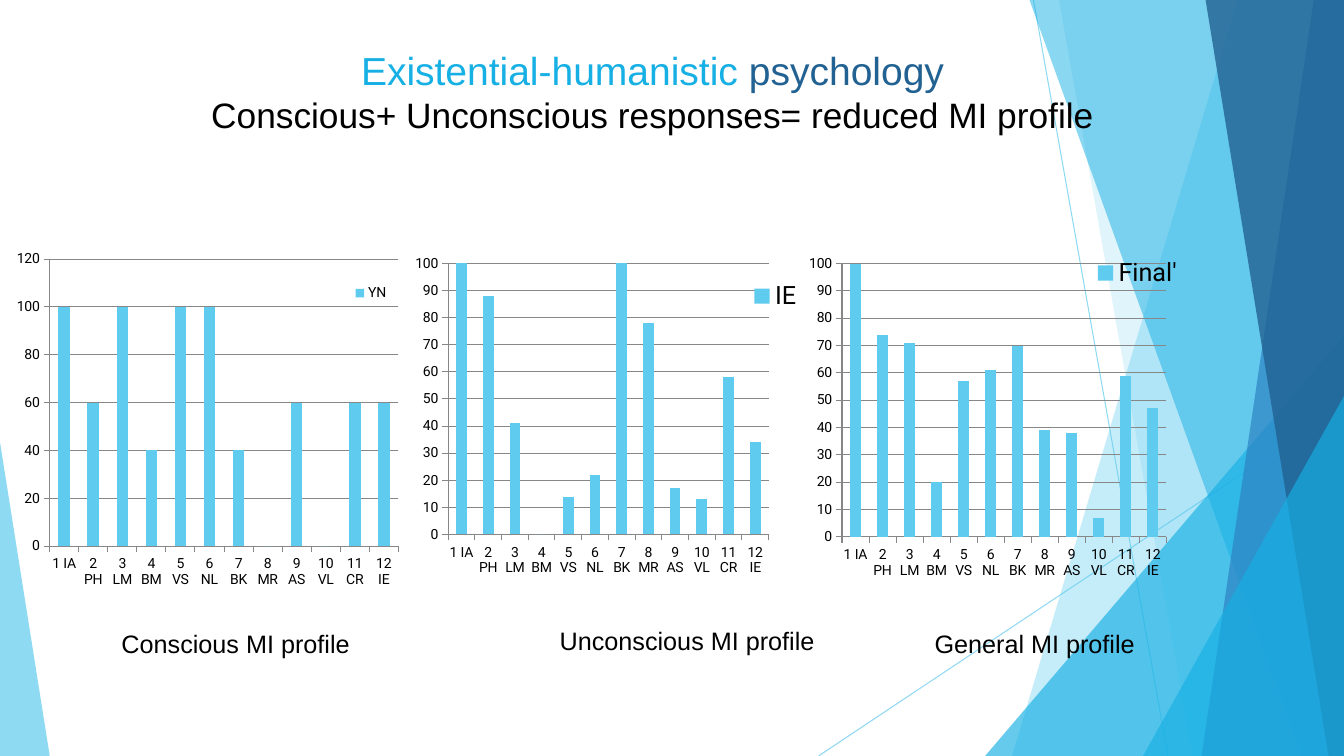
from dataclasses import dataclass

import pptx
import pptx.chart.data
import pptx.dml.color
import pptx.enum.chart
import pptx.enum.shapes
import pptx.enum.text
import pptx.oxml
import pptx.oxml.ns
import pptx.util

qn = pptx.oxml.ns.qn
NS = pptx.oxml.ns.nsdecls("a", "c")
RIGHT_TRIANGLE = 1  # apex adjustment: 0 is left, 1 is right


@dataclass(frozen=True)
class Theme:
    sky: str = "5FCBEF"
    blue: str = "17B0E4"
    steel: str = "2E83C3"
    navy: str = "226292"
    black: str = "000000"
    grid: str = "878787"
    font: str = "Arial"
    chart_font: str = "Roboto"
    title: float = 27.9
    subtitle: float = 25.2
    caption: float = 18
    axis: float = 10


def rgb(color):
    return pptx.dml.color.RGBColor.from_string(color)


def format_font(font, name, size, color):
    font.name, font.size, font.color.rgb = name, pptx.util.Pt(size), rgb(color)


def add_text(p, text, *, font, size, color):
    r = p.add_run()
    r.text = text
    format_font(r.font, font, size, color)


def set_alpha(sp, percent):
    for clr in sp._element.spPr.iter(qn("a:srgbClr")):
        clr.append(pptx.oxml.parse_xml(f'<a:alpha {NS} val="{percent * 1000}"/>'))


def set_layout(parent, index, inner=False, **shares):
    """Place a plot area or legend by x, y, w and h shares of its chart."""
    for old in parent.findall(qn("c:layout")):
        parent.remove(old)
    target = '<c:layoutTarget val="inner"/>' if inner else ""
    modes = "".join(f'<c:{k}Mode val="edge"/>' for k in "xy")
    sizes = "".join(f'<c:{k} val="{v}"/>' for k, v in shares.items())
    parent.insert(index, pptx.oxml.parse_xml(
        f"<c:layout {NS}><c:manualLayout>{target}{modes}{sizes}"
        "</c:manualLayout></c:layout>"))


def clear_fill():
    return pptx.oxml.parse_xml(
        f"<c:spPr {NS}><a:noFill/><a:ln><a:noFill/></a:ln></c:spPr>")


class Deck:
    """Slide builder; every length is a percentage of the slide's size."""

    def __init__(self, theme):
        self.theme = theme
        self.prs = pptx.Presentation()
        self.prs.slide_width = pptx.util.Inches(13.33)
        self.prs.slide_height = pptx.util.Inches(7.5)
        self.s = self.prs.slides.add_slide(self.prs.slide_layouts[5])

    def x(self, share):
        return int(self.prs.slide_width * share / 100)

    def y(self, share):
        return int(self.prs.slide_height * share / 100)

    def box(self, x, y, w, h):
        return self.x(x), self.y(y), self.x(w), self.y(h)

    def paint(self, sp, color, alpha):
        sp.shadow.inherit = False
        sp.fill.solid()
        sp.fill.fore_color.rgb = rgb(color)
        sp.line.fill.background()
        set_alpha(sp, alpha)

    def line(self, x1, y1, x2, y2):
        cx = self.s.shapes.add_connector(
            pptx.enum.shapes.MSO_CONNECTOR.STRAIGHT,
            self.x(x1), self.y(y1), self.x(x2), self.y(y2))
        cx.line.color.rgb = rgb(self.theme.sky)
        cx.line.width = pptx.util.Pt(0.75)
        set_alpha(cx, 70)
        cx._element.spPr.append(pptx.oxml.parse_xml(f"<a:effectLst {NS}/>"))

    def band(self, top, bottom, color, alpha):
        """Fill from a slanted left edge to the right side of the slide."""
        fb = self.s.shapes.build_freeform(self.x(top), 0)
        fb.add_line_segments([(self.x(100), 0), (self.x(100), self.y(100)),
                              (self.x(bottom), self.y(100))])
        self.paint(fb.convert_to_shape(), color, alpha)

    def triangle(self, x, y, w, apex, color, alpha):
        """Stand a triangle on the bottom edge of the slide."""
        sp = self.s.shapes.add_shape(
            pptx.enum.shapes.MSO_SHAPE.ISOSCELES_TRIANGLE,
            *self.box(x, y, w, 100 - y))
        sp.adjustments[0] = apex
        self.paint(sp, color, alpha)

    def title(self, x, y, w, h, lines):
        sp = self.s.shapes.title
        sp.left, sp.top, sp.width, sp.height = self.box(x, y, w, h)
        self.s.shapes._spTree.append(sp._element)
        tf = sp.text_frame
        tf.word_wrap = True
        tf.vertical_anchor = pptx.enum.text.MSO_ANCHOR.TOP
        tf.margin_top = pptx.util.Inches(0.08)
        p = tf.paragraphs[0]
        p.alignment = pptx.enum.text.PP_ALIGN.CENTER
        for i, runs in enumerate(lines):
            if i:
                p.add_line_break()
            for text, size, color in runs:
                add_text(p, text, font=self.theme.font, size=size, color=color)

    def caption(self, x, y, w, text):
        tf = self.s.shapes.add_textbox(*self.box(x, y, w, 5.3)).text_frame
        tf.word_wrap = False
        add_text(tf.paragraphs[0], text, font=self.theme.font,
                 size=self.theme.caption, color=self.theme.black)

    def chart(self, box, name, values, plot, legend, legend_size, top=None):
        t = self.theme
        data = pptx.chart.data.CategoryChartData()
        data.categories = CATEGORIES
        data.add_series(name, values)
        chart = self.s.shapes.add_chart(
            pptx.enum.chart.XL_CHART_TYPE.COLUMN_CLUSTERED,
            *self.box(*box), data).chart
        format_font(chart.font, t.chart_font, t.axis, t.black)
        chart.has_title = False
        bars = chart.plots[0]
        bars.gap_width, bars.vary_by_categories = 150, False
        fill = bars.series[0].format.fill
        fill.solid()
        fill.fore_color.rgb = rgb(t.sky)

        value_axis = chart.value_axis
        value_axis.has_major_gridlines = True
        if top:
            value_axis.minimum_scale, value_axis.maximum_scale = 0, top
            value_axis.major_unit = 10
        value_axis.tick_labels.number_format = "0"
        value_axis.tick_labels.number_format_is_linked = False
        for axis in (chart.category_axis, value_axis):
            axis.major_tick_mark = pptx.enum.chart.XL_TICK_MARK.OUTSIDE
        for part in (chart.category_axis, value_axis, value_axis.major_gridlines):
            part.format.line.color.rgb = rgb(t.grid)
            part.format.line.width = pptx.util.Pt(0.75)

        chart.has_legend = True
        chart.legend.position = pptx.enum.chart.XL_LEGEND_POSITION.RIGHT
        chart.legend.include_in_layout = False
        format_font(chart.legend.font, t.chart_font, legend_size, t.black)
        set_layout(chart.legend._element, 1, **dict(zip("xywh", legend)))
        root = chart._chartSpace.find(qn("c:chart"))
        plot_area = root.find(qn("c:plotArea"))
        set_layout(plot_area, 0, inner=True, **dict(zip("xywh", plot)))
        plot_area.append(clear_fill())
        root.addnext(clear_fill())


CATEGORIES = ["1 IA", "2 PH", "3 LM", "4 BM", "5 VS", "6 NL", "7 BK",
              "8 MR", "9 AS", "10 VL", "11 CR", "12 IE"]


def main():
    t = Theme()
    d = Deck(t)
    d.line(76.9, 0, 86.9, 100)
    d.line(100, 53.7, 60.9, 100)
    d.band(92.1, 75.3, t.sky, 36)
    d.band(78.8, 88.75, t.sky, 20)
    d.triangle(73.3, 44.4, 26.7, RIGHT_TRIANGLE, t.blue, 66)
    d.band(76.6, 96.85, t.blue, 50)
    d.band(97.75, 89.4, t.steel, 70)
    d.band(89.7, 98.85, t.navy, 80)
    d.triangle(85.05, 52.4, 14.95, RIGHT_TRIANGLE, t.blue, 66)
    d.triangle(0, 58.5, 3.7, 0, t.sky, 70)

    d.title(7.2, 5.1, 82.7, 19.2, [
        [("Existential-humanistic ", t.title, t.blue), ("psychology", t.title, t.navy)],
        [("Conscious+ Unconscious responses= reduced MI profile", t.subtitle, t.black)]])

    d.chart((60.2, 31.7, 29.6, 52), "Final'",
            [100, 74, 71, 20, 57, 61, 70, 39, 38, 7, 59, 47],
            (0.081, 0.061, 0.817, 0.695), (0.7, 0.04, 0.25, 0.09), t.caption, top=100)
    d.chart((-1.2, 31.7, 32, 50.5), "YN",
            [100, 60, 100, 40, 100, 100, 40, 0, 60, 0, 60, 60],
            (0.153, 0.051, 0.811, 0.752), (0.84, 0.11, 0.12, 0.06), t.axis)
    d.chart((30.9, 31.7, 29.6, 51.6), "IE",
            [100, 88, 41, 0, 14, 22, 100, 78, 17, 13, 58, 34],
            (0.081, 0.061, 0.807, 0.695), (0.83, 0.1, 0.15, 0.09), t.caption, top=100)

    d.caption(8.3, 82.5, 18.7, "Conscious MI profile")
    d.caption(40.9, 82.1, 20.6, "Unconscious MI profile")
    d.caption(68.8, 82.4, 16.6, "General MI profile")
    d.prs.save("out.pptx")


if __name__ == "__main__":
    main()
